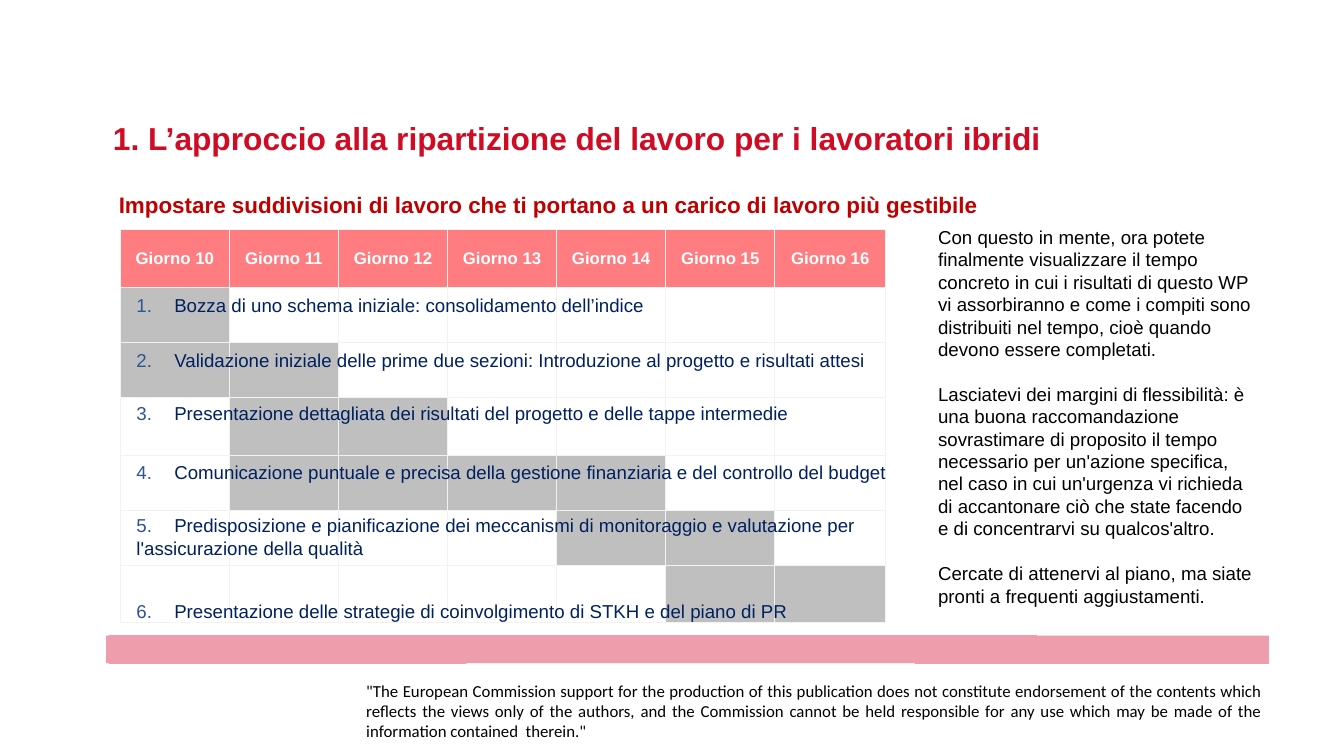
from lxml import etree
from pptx import Presentation
from pptx.dml.color import RGBColor
from pptx.enum.text import MSO_ANCHOR, MSO_AUTO_SIZE, PP_ALIGN
from pptx.oxml.ns import qn
from pptx.util import Pt

LEFT, MID, FULL = PP_ALIGN.LEFT, PP_ALIGN.CENTER, PP_ALIGN.JUSTIFY
TOP, CENTRE = MSO_ANCHOR.TOP, MSO_ANCHOR.MIDDLE
FIXED = MSO_AUTO_SIZE.NONE

THEME = {
    "title": ("Arial", 34, "D00B24", True),
    "sub": ("Arial", 24, "C00000", True),
    "body": ("Arial", 20, "000000", False),
    "task": ("Arial", 20, "002060", False),
    "head": ("Arial", 18, "FFFFFF", True),
    "foot": ("Calibri", 18, "000000", False),
    "number": "2F5496",
    "top": "FF7C80",
    "busy": "BFBFBF",
    "free": "FFFFFF",
    "grid": "F2F2F2",
    "band": "ED9DAB",
}

TITLE = "1. L’approccio alla ripartizione del lavoro per i lavoratori ibridi"
SUB = "Impostare suddivisioni di lavoro che ti portano a un carico di lavoro più gestibile"
NOTES = [
    "Con questo in mente, ora potete finalmente visualizzare il tempo concreto in cui i risultati di questo WP vi assorbiranno e come i compiti sono distribuiti nel tempo, cioè quando devono essere completati.",
    "Lasciatevi dei margini di flessibilità: è una buona raccomandazione sovrastimare di proposito il tempo necessario per un'azione specifica, nel caso in cui un'urgenza vi richieda di accantonare ciò che state facendo e di concentrarvi su qualcos'altro.",
    "Cercate di attenervi al piano, ma siate pronti a frequenti aggiustamenti.",
]
FOOT = "\"The European Commission support for the production of this publication does not constitute endorsement of the contents which reflects the views only of the authors, and the Commission cannot be held responsible for any use which may be made of the information contained  therein.\""

DAYS = range(10, 17)
SPANS = [(10, 10), (10, 11), (11, 12), (11, 14), (14, 15), (15, 16)]
WIDTHS = [116.9] * 6 + [119]
HEIGHTS = [62.5, 59, 58.5, 62, 59, 59, 61.5]

# (first number of the list or None, gap above, text)
TASKS = [
    (1, 0, "Bozza di uno schema iniziale: consolidamento dell’indice"),
    (1, 34.8, "Validazione iniziale delle prime due sezioni: Introduzione al progetto e risultati attesi"),
    (1, 33.6, "Presentazione dettagliata dei risultati del progetto e delle tappe intermedie"),
    (1, 38.4, "Comunicazione puntuale e precisa della gestione finanziaria e del controllo del budget"),
    (1, 33.6, "Predisposizione e pianificazione dei meccanismi di monitoraggio e valutazione per"),
    (None, 0, "l'assicurazione della qualità"),
    (6, 43.2, "Presentazione delle strategie di coinvolgimento di STKH e del piano di PR"),
]

BAND = [
    (1359.4, 681), (1111, 681), (1111, 680.4), (116.6, 680.4), (116.6, 681),
    (113.8, 681), (113.8, 710.6), (116.6, 710.6), (116.6, 711.4), (499.7, 711.4),
    (499.7, 710.6), (980.6, 710.6), (980.6, 711.4), (1359.4, 711.4),
]


def place(shape, x, y, w, h):
    shape.left, shape.top, shape.width, shape.height = Pt(x), Pt(y), Pt(w), Pt(h)
    frame = shape.text_frame
    frame.word_wrap = True
    frame.auto_size = FIXED
    frame.vertical_anchor = TOP
    return frame


def write(para, text, style, align=LEFT, gap=0):
    para.alignment = align
    para.space_before = Pt(gap)
    run = para.add_run()
    run.text = text
    font = run.font
    font.name, size, tint, font.bold = THEME[style]
    font.size = Pt(size)
    font.color.rgb = RGBColor.from_string(tint)


def next_para(frame, index):
    return frame.add_paragraph() if index else frame.paragraphs[0]


def tint_node(parent, tint):
    etree.SubElement(parent, qn("a:srgbClr"), val=tint)


def bullet(para, start=None):
    props = para._p.get_or_add_pPr()
    hang = Pt(40.5) if start else 0
    props.set("marL", str(hang))
    props.set("indent", str(-hang))
    if start is None:
        etree.SubElement(props, qn("a:buNone"))
        return
    tint_node(etree.SubElement(props, qn("a:buClr")), THEME["number"])
    etree.SubElement(props, qn("a:buFont"), typeface="Arial")
    num = etree.SubElement(props, qn("a:buAutoNum"), type="arabicPeriod")
    if start > 1:
        num.set("startAt", str(start))


def paint(cell, tint):
    props = cell._tc.get_or_add_tcPr()
    for side in ("lnL", "lnR", "lnT", "lnB"):
        line = etree.SubElement(props, qn("a:" + side), w=str(Pt(1)))
        tint_node(etree.SubElement(line, qn("a:solidFill")), THEME["grid"])
    cell.fill.solid()
    cell.fill.fore_color.rgb = RGBColor.from_string(THEME[tint])


def add_band(shapes):
    pen = shapes.build_freeform(Pt(BAND[0][0]), Pt(BAND[0][1]))
    pen.add_line_segments([(Pt(x), Pt(y)) for x, y in BAND[1:]], close=True)
    band = pen.convert_to_shape()
    band.shadow.inherit = False
    band.fill.solid()
    band.fill.fore_color.rgb = RGBColor.from_string(THEME["band"])
    band.line.fill.background()


def add_plan(shapes):
    frame = shapes.add_table(len(HEIGHTS), len(WIDTHS), Pt(128.9), Pt(245.8),
                             Pt(sum(WIDTHS)), Pt(sum(HEIGHTS)))
    plan = frame.table
    for col, width in zip(plan.columns, WIDTHS):
        col.width = Pt(width)
    for row, height in zip(plan.rows, HEIGHTS):
        row.height = Pt(height)
    for c, day in enumerate(DAYS):
        head = plan.cell(0, c)
        paint(head, "top")
        head.vertical_anchor = CENTRE
        write(head.text_frame.paragraphs[0], f"Giorno {day}", "head", MID)
        for r, (first, last) in enumerate(SPANS, 1):
            paint(plan.cell(r, c), "busy" if first <= day <= last else "free")


def main():
    deck = Presentation()
    deck.slide_width, deck.slide_height = Pt(1440), Pt(810)
    slide = deck.slides.add_slide(deck.slide_layouts[3])
    shapes = slide.shapes
    holders = slide.placeholders
    add_band(shapes)

    foot = place(shapes.add_textbox(0, 0, 0, 0), 392.4, 730.8, 959.8, 54.7)
    foot.margin_left = foot.margin_right = foot.margin_top = foot.margin_bottom = 0
    foot.paragraphs[0].line_spacing = 0.98
    write(foot.paragraphs[0], FOOT, "foot", FULL)

    title = place(shapes.title, 113.8, 123.8, 1089.4, 48.2)
    write(title.paragraphs[0], TITLE, "title")
    sub = place(shapes.add_textbox(0, 0, 0, 0), 120.2, 201.6, 1232, 36)
    write(sub.paragraphs[0], SUB, "sub")

    notes = place(holders[2], 997.9, 238.3, 354.2, 419)
    for i, text in enumerate(NOTES):
        para = next_para(notes, i)
        bullet(para)
        write(para, text, "body", gap=24 if i else 0)

    add_plan(shapes)
    tasks = place(holders[1], 139, 311, 1300, 362.2)
    for i, (start, gap, text) in enumerate(TASKS):
        para = next_para(tasks, i)
        bullet(para, start)
        write(para, text, "task", gap=gap)
    shapes._spTree.append(holders[1]._element)

    deck.save("out.pptx")


if __name__ == "__main__":
    main()
